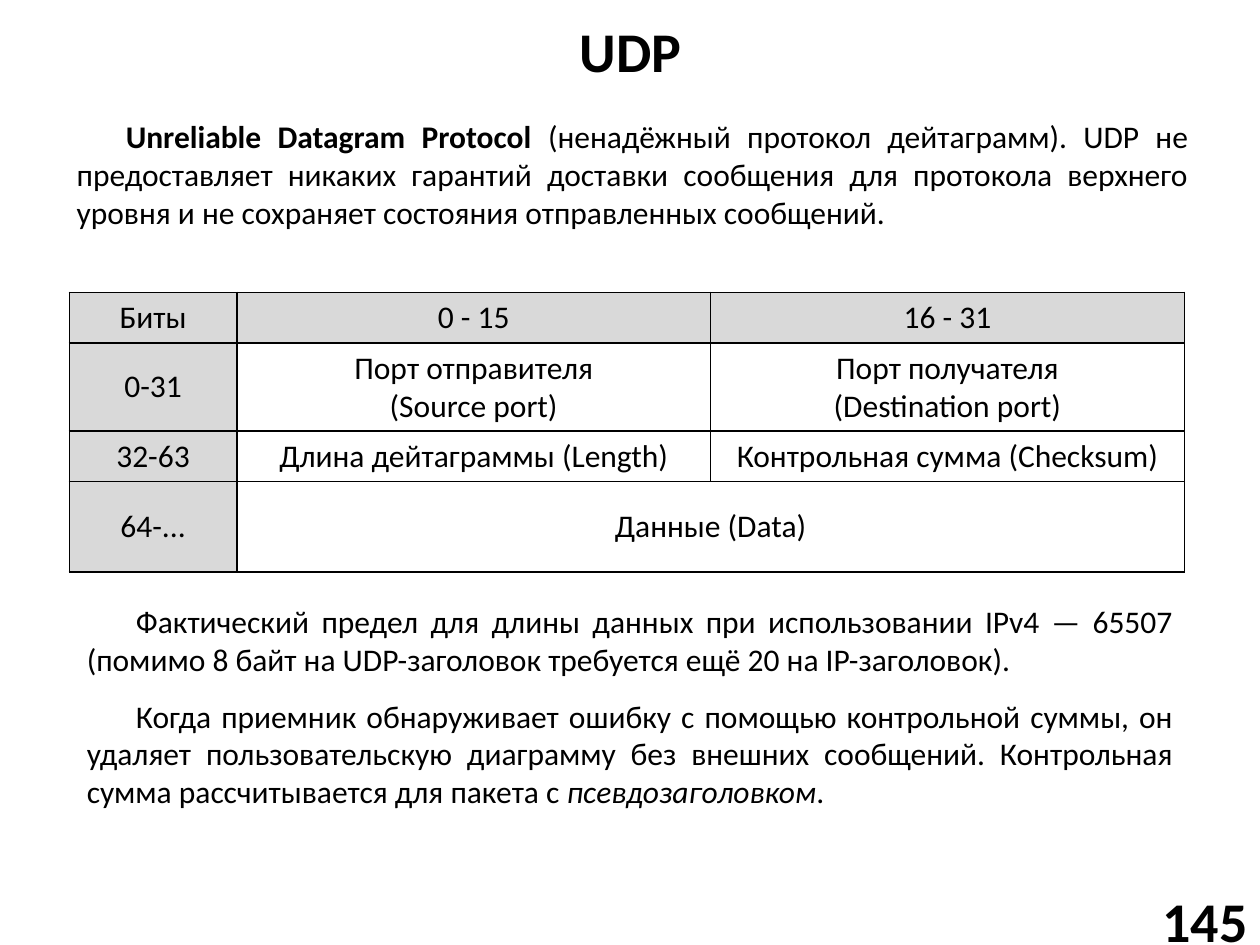
from lxml import etree
from pptx import Presentation
from pptx.dml.color import RGBColor
from pptx.enum.text import MSO_ANCHOR, PP_ALIGN
from pptx.oxml.ns import qn
from pptx.util import Inches, Pt

CENTER, RIGHT, JUSTIFY = PP_ALIGN.CENTER, PP_ALIGN.RIGHT, PP_ALIGN.JUSTIFY
TOP, MIDDLE = MSO_ANCHOR.TOP, MSO_ANCHOR.MIDDLE
BLACK = RGBColor(0x00, 0x00, 0x00)
LABEL_GRAY = RGBColor(0xD9, 0xD9, 0xD9)
FONT = "Calibri"
HEADING_SIZE, BODY_SIZE = 32, 18

COLUMN_WIDTHS = [1.33, 3.76, 3.76]
ROW_HEIGHTS = [0.4, 0.7, 0.4, 0.72]
HEADER_FIELDS = [
    ["Биты", "0 - 15", "16 - 31"],
    ["0-31", "Порт отправителя\n(Source port)", "Порт получателя\n(Destination port)"],
    ["32-63", "Длина дейтаграммы (Length)", "Контрольная сумма (Checksum)"],
    ["64-...", "Данные (Data)", ""],
]

DEFINITION = [
    ("Unreliable Datagram Protocol ", True, False),
    ("(ненадёжный протокол дейтаграмм). UDP не предоставляет никаких гарантий "
     "доставки сообщения для протокола верхнего уровня и не сохраняет состояния "
     "отправленных сообщений.", False, False),
]
LENGTH_LIMIT = [
    ("Фактический предел для длины данных при использовании IPv4 — 65507 "
     "(помимо 8 байт на UDP-заголовок требуется ещё 20 на IP-заголовок).", False, False),
]
CHECKSUM_ERROR = [
    ("Когда приемник обнаруживает ошибку с помощью контрольной суммы, он удаляет "
     "пользовательскую диаграмму без внешних сообщений. Контрольная сумма "
     "рассчитывается для пакета с ", False, False),
    ("псевдозаголовком", False, True),
    (".", False, False),
]


def add_run(paragraph, text, size, bold=False, italic=False):
    run = paragraph.add_run()
    run.text = text
    font = run.font
    font.name, font.size = FONT, Pt(size)
    font.bold, font.italic = bold, italic
    font.color.rgb = BLACK


def add_text(slide, left, top, width, height, runs, size, alignment, anchor):
    box = slide.shapes.add_textbox(Inches(left), Inches(top), Inches(width), Inches(height))
    frame = box.text_frame
    frame.word_wrap = True
    frame.vertical_anchor = anchor
    paragraph = frame.paragraphs[0]
    paragraph.alignment = alignment
    for text, bold, italic in runs:
        add_run(paragraph, text, size, bold, italic)
    return paragraph


def add_heading(slide, left, top, width, height, text, alignment):
    add_text(slide, left, top, width, height, [(text, True, False)],
             HEADING_SIZE, alignment, MIDDLE)


def add_body(slide, left, top, width, height, runs):
    paragraph = add_text(slide, left, top, width, height, runs, BODY_SIZE, JUSTIFY, TOP)
    paragraph._p.get_or_add_pPr().set("indent", str(Inches(0.39)))


def add_borders(cell):
    properties = cell._tc.get_or_add_tcPr()
    for position, side in enumerate(("a:lnL", "a:lnR", "a:lnT", "a:lnB")):
        line = etree.Element(qn(side), w=str(Pt(1)))
        fill = etree.SubElement(line, qn("a:solidFill"))
        etree.SubElement(fill, qn("a:srgbClr"), val=str(BLACK))
        properties.insert(position, line)


def fill_cell(cell, text, is_label):
    cell.vertical_anchor = MIDDLE
    if is_label:
        cell.fill.solid()
        cell.fill.fore_color.rgb = LABEL_GRAY
    else:
        cell.fill.background()
    add_borders(cell)
    frame = cell.text_frame
    for index, line in enumerate(text.split("\n") if text else []):
        paragraph = frame.add_paragraph() if index else frame.paragraphs[0]
        paragraph.alignment = CENTER
        add_run(paragraph, line, BODY_SIZE)


def add_datagram_table(slide):
    table = slide.shapes.add_table(
        len(ROW_HEIGHTS), len(COLUMN_WIDTHS), Inches(0.55), Inches(2.32),
        Inches(sum(COLUMN_WIDTHS)), Inches(sum(ROW_HEIGHTS))).table
    table.first_row = table.horz_banding = False
    for column, width in zip(table.columns, COLUMN_WIDTHS):
        column.width = Inches(width)
    for row, height in zip(table.rows, ROW_HEIGHTS):
        row.height = Inches(height)
    for r, fields in enumerate(HEADER_FIELDS):
        for c, text in enumerate(fields):
            fill_cell(table.cell(r, c), text, r == 0 or c == 0)
    data_cell = table.cell(3, 1)
    data_cell.merge(table.cell(3, 2))
    data_cell.margin_top = data_cell.margin_bottom = Inches(0.21)


def main():
    presentation = Presentation()
    presentation.slide_width, presentation.slide_height = Inches(10), Inches(7.5)
    slide = presentation.slides.add_slide(presentation.slide_layouts[6])
    add_heading(slide, 0.28, 0.05, 9.45, 0.69, "UDP", CENTER)
    add_heading(slide, 8.86, 7.1, 1.14, 0.4, "145", RIGHT)
    add_body(slide, 0.51, 0.88, 9.02, 1.01, DEFINITION)
    add_datagram_table(slide)
    add_body(slide, 0.59, 4.73, 8.82, 0.71, LENGTH_LIMIT)
    add_body(slide, 0.59, 5.48, 8.82, 1.01, CHECKSUM_ERROR)
    presentation.save("out.pptx")


if __name__ == "__main__":
    main()
